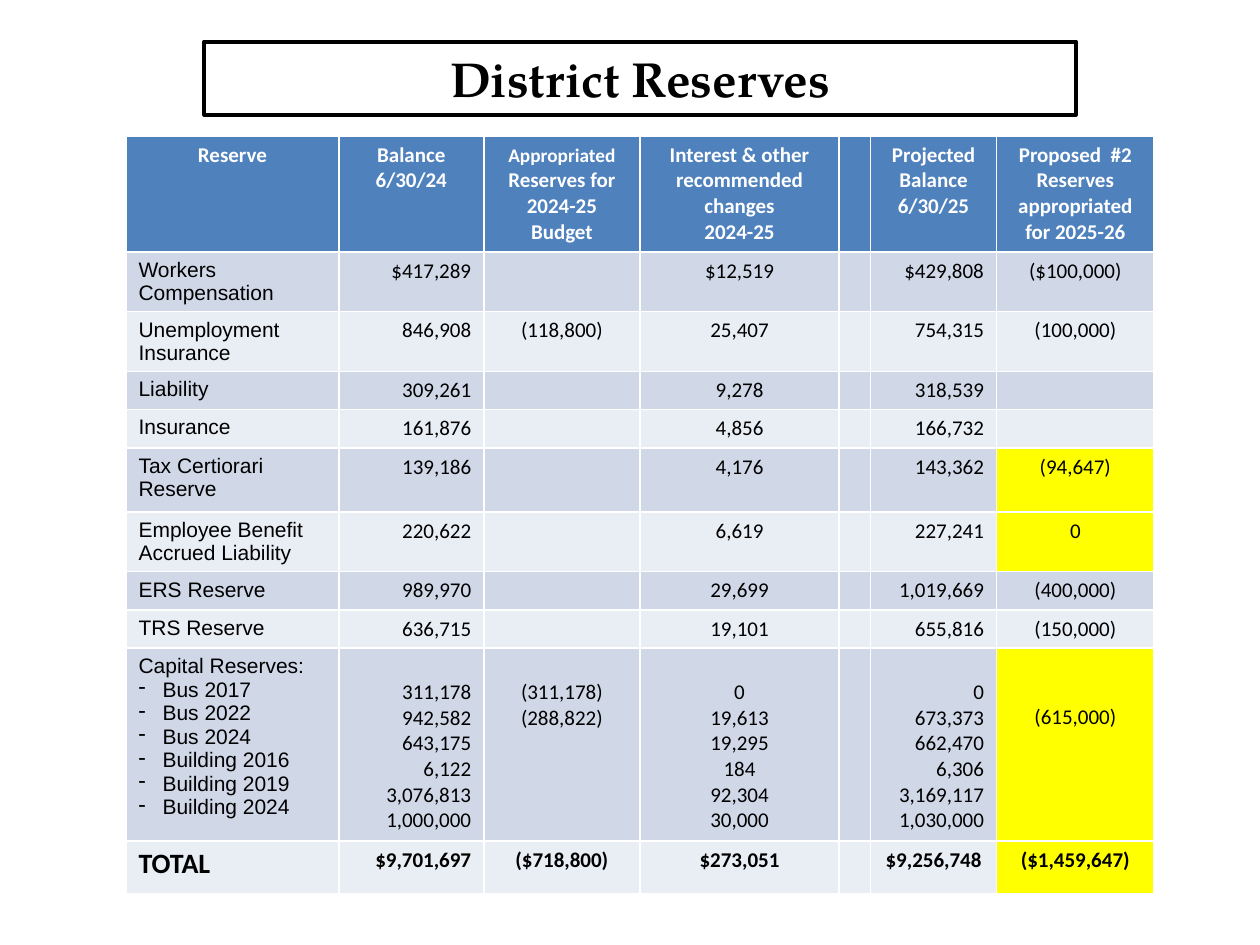
from lxml import etree
from pptx import Presentation
from pptx.dml.color import RGBColor
from pptx.enum import shapes, text
from pptx.oxml import ns
from pptx.util import Inches, Pt

COLORS = {
    "ink": "000000", "paper": "FFFFFF", "header": "4F81BD",
    "dark_band": "D0D8E8", "light_band": "E9EDF4", "highlight": "FFFF00",
}
LEFT, CENTER, RIGHT = text.PP_ALIGN.LEFT, text.PP_ALIGN.CENTER, text.PP_ALIGN.RIGHT
COLUMN_WIDTHS = [1.69, 1.15, 1.24, 1.58, 0.25, 1, 1.25]
COLUMN_ALIGNS = [LEFT, RIGHT, CENTER, CENTER, CENTER, RIGHT, CENTER]
ROW_HEIGHTS = [0.92, 0.47, 0.47, 0.3, 0.3, 0.51, 0.47, 0.3, 0.3, 1.53, 0.42]
LINE_HEIGHT = 0.2
HEADER, CAPITAL, TOTAL = 0, 9, 10
HIGHLIGHTED_ROWS = {5, 6, CAPITAL, TOTAL}
RESERVES = [
    ["Reserve", "Balance\n6/30/24", "Appropriated Reserves for\n2024-25 Budget",
     "Interest & other recommended changes\n2024-25", "",
     "Projected\nBalance\n6/30/25", "Proposed  #2 Reserves appropriated for 2025-26"],
    ["Workers Compensation", "$417,289", "", "$12,519", "", "$429,808", "($100,000)"],
    ["Unemployment Insurance", "846,908", "(118,800)", "25,407", "", "754,315", "(100,000)"],
    ["Liability", "309,261", "", "9,278", "", "318,539", ""],
    ["Insurance", "161,876", "", "4,856", "", "166,732", ""],
    ["Tax Certiorari Reserve", "139,186", "", "4,176", "", "143,362", "(94,647)"],
    ["Employee Benefit Accrued Liability", "220,622", "", "6,619", "", "227,241", "0"],
    ["ERS Reserve", "989,970", "", "29,699", "", "1,019,669", "(400,000)"],
    ["TRS Reserve", "636,715", "", "19,101", "", "655,816", "(150,000)"],
    ["Capital Reserves:\nBus 2017\nBus 2022\nBus 2024\n"
     "Building 2016\nBuilding 2019\nBuilding 2024",
     "311,178\n942,582\n643,175\n6,122\n3,076,813\n1,000,000",
     "(311,178)\n(288,822)",
     "0\n19,613\n19,295\n184\n92,304\n30,000", "",
     "0\n673,373\n662,470\n6,306\n3,169,117\n1,030,000", "(615,000)"],
    ["TOTAL", "$9,701,697", "($718,800)", "$273,051", "", "$9,256,748", "($1,459,647)"],
]


def rgb(name):
    """Return the named colour."""
    return RGBColor.from_string(COLORS[name])


def style_font(paragraph, face, size, bold, color):
    """Set the font of a paragraph."""
    font = paragraph.font
    font.name, font.size, font.bold = face, Pt(size), bold
    font.color.rgb = rgb(color)


def add_dash(paragraph):
    """Give a paragraph a hanging dash bullet."""
    properties = paragraph._p.get_or_add_pPr()
    properties.set("marL", str(Inches(0.19)))
    properties.set("indent", str(Inches(-0.19)))
    bullet = etree.Element(ns.qn("a:buChar"), char="-")
    properties.insert(0, bullet)


def add_title(slide, left, top, width, height):
    """Draw the framed slide title."""
    frame = slide.shapes.add_shape(
        shapes.MSO_SHAPE.RECTANGLE, Inches(left), Inches(top), Inches(width), Inches(height))
    frame.shadow.inherit = False
    frame.fill.background()
    frame.line.color.rgb = rgb("ink")
    frame.line.width = Pt(2.25)
    frame.text_frame.vertical_anchor = text.MSO_ANCHOR.MIDDLE
    heading = frame.text_frame.paragraphs[0]
    heading.text = "District Reserves"
    heading.alignment = CENTER
    style_font(heading, "TeX Gyre Pagella", 28, True, "ink")


def cell_fill(row, column):
    """Choose the fill colour of a cell."""
    if row == HEADER:
        return "header"
    if column == 6 and row in HIGHLIGHTED_ROWS:
        return "highlight"
    return "dark_band" if row % 2 else "light_band"


def fill_cell(cell, row, column, content):
    """Write and format one cell."""
    cell.fill.solid()
    cell.fill.fore_color.rgb = rgb(cell_fill(row, column))
    cell.text = content
    emphasized = row in (HEADER, TOTAL)
    face = "Arial" if column == 0 and not emphasized else "Calibri"
    size = 16 if (row, column) == (TOTAL, 0) else 12
    align = CENTER if row == HEADER or (row, column) == (TOTAL, 5) else COLUMN_ALIGNS[column]
    for paragraph in cell.text_frame.paragraphs:
        paragraph.alignment = align
        style_font(paragraph, face, size, emphasized, "paper" if row == HEADER else "ink")
    if row == CAPITAL and column == 0:
        for account in cell.text_frame.paragraphs[1:]:
            add_dash(account)
    elif row == CAPITAL:
        skipped_lines = 2 if column == 6 else 1
        cell.margin_top = Inches(0.05 + skipped_lines * LINE_HEIGHT)


def add_reserves(slide, left, top):
    """Draw the table of reserves."""
    table = slide.shapes.add_table(
        len(RESERVES), len(COLUMN_WIDTHS), Inches(left), Inches(top),
        Inches(sum(COLUMN_WIDTHS)), Inches(sum(ROW_HEIGHTS))).table
    for column, width in zip(table.columns, COLUMN_WIDTHS):
        column.width = Inches(width)
    for row, height in zip(table.rows, ROW_HEIGHTS):
        row.height = Inches(height)
    for row, contents in enumerate(RESERVES):
        for column, content in enumerate(contents):
            fill_cell(table.cell(row, column), row, column, content)
    appropriated = table.cell(HEADER, 2).text_frame.paragraphs[0]
    first, rest = appropriated.runs[0].text.split(" ", 1)
    appropriated.runs[0].text = first
    appropriated.runs[0].font.size = Pt(11)
    appropriated.add_run().text = " " + rest


def main():
    """Build the slide and save it."""
    deck = Presentation()
    deck.slide_width, deck.slide_height = Inches(10), Inches(7.5)
    slide = deck.slides.add_slide(deck.slide_layouts[6])
    add_title(slide, 1.62, 0.33, 6.92, 0.58)
    add_reserves(slide, 1, 1.08)
    deck.save("out.pptx")


if __name__ == "__main__":
    main()
